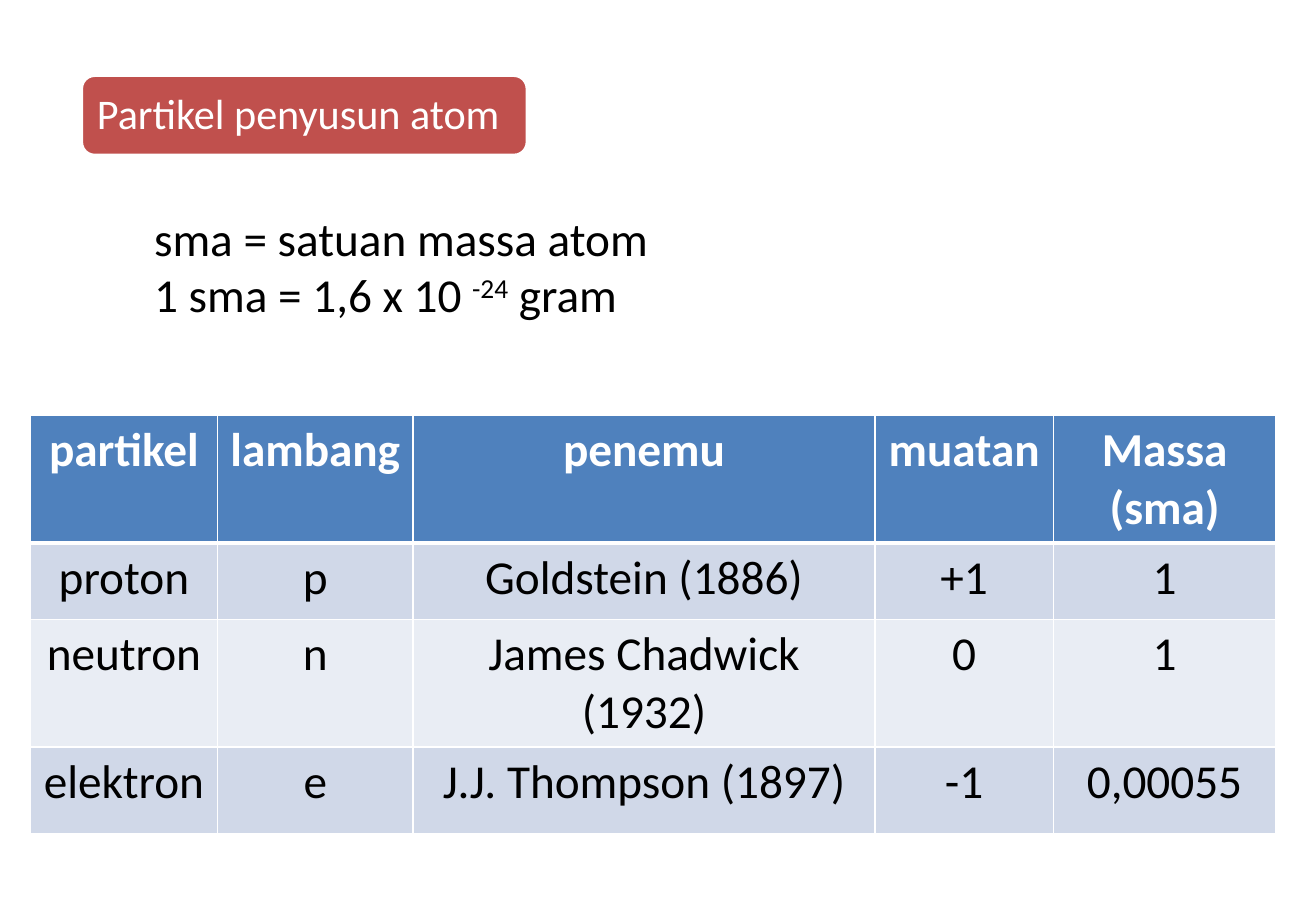
import pptx
import pptx.dml.color
import pptx.enum.shapes
import pptx.enum.text
import pptx.oxml
import pptx.oxml.ns
import pptx.util

PX = 9144  # EMU per px, 100 px to the inch
FONT = "Calibri"
WHITE, BLACK = "FFFFFF", "000000"
RED, BLUE = "C0504D", "4F81BD"
BANDS = ["D0D8E8", "E9EDF4"]

COLUMN_WIDTHS = [154, 161, 380, 147, 183]
ROW_HEIGHTS = [104, 63, 105, 71]
PARTICLES = [
    ["partikel", "lambang", "penemu", "muatan", "Massa (sma)"],
    ["proton", "p", "Goldstein (1886)", "+1", "1"],
    ["neutron", "n", "James Chadwick (1932)", "0", "1"],
    ["elektron", "e", "J.J. Thompson (1897)", "-1", "0,00055"],
]


def px(*lengths):
    return [pptx.util.Emu(length * PX) for length in lengths]


def rgb(color):
    return pptx.dml.color.RGBColor.from_string(color)


def add_run(paragraph, text, size, color, bold=False, baseline=0):
    run = paragraph.add_run()
    run.text = text
    run.font.name = FONT
    run.font.size = pptx.util.Pt(size)
    run.font.bold = bold
    run.font.color.rgb = rgb(color)
    if baseline:
        run._r.get_or_add_rPr().set("baseline", str(baseline * 1000))


def add_text_frame(slide, left, top, width, height):
    frame = slide.shapes.add_textbox(*px(left, top, width, height)).text_frame
    frame.word_wrap = True
    return frame


def add_heading(slide, text):
    plate = slide.shapes.add_shape(
        pptx.enum.shapes.MSO_SHAPE.ROUNDED_RECTANGLE, *px(67, 62, 367, 66))
    plate.shadow.inherit = False
    plate.fill.solid()
    plate.fill.fore_color.rgb = rgb(RED)
    plate.line.color.rgb = rgb(WHITE)
    plate.line.width = pptx.util.Pt(2)

    heading = add_text_frame(slide, 70, 66, 360, 59)
    heading.margin_top, heading.margin_bottom = px(10, 10)
    heading.vertical_anchor = pptx.enum.text.MSO_ANCHOR.MIDDLE
    heading.paragraphs[0].line_spacing = 0.9
    add_run(heading.paragraphs[0], text, 25, WHITE)


def add_unit_note(slide):
    note = add_text_frame(slide, 117, 167, 500, 104)
    note.auto_size = pptx.enum.text.MSO_AUTO_SIZE.SHAPE_TO_FIT_TEXT
    add_run(note.paragraphs[0], "sma = satuan massa atom", 28, BLACK)
    conversion = note.add_paragraph()
    for text, baseline in [("1 sma = 1,6 x 10 ", 0), ("-24", 30), (" gram", 0)]:
        add_run(conversion, text, 28, BLACK, baseline=baseline)


def set_borders(cell, top, bottom):
    properties = cell._tc.get_or_add_tcPr()
    widths = {"lnL": 1, "lnR": 1, "lnT": top, "lnB": bottom}
    for position, (side, width) in enumerate(widths.items()):
        border = pptx.oxml.parse_xml(
            f'<a:{side} {pptx.oxml.ns.nsdecls("a")} w="{pptx.util.Pt(width)}">'
            f'<a:solidFill><a:srgbClr val="{WHITE}"/></a:solidFill></a:{side}>')
        properties.insert(position, border)


def fill_cell(cell, text, row):
    is_header = row == 0
    cell.fill.solid()
    cell.fill.fore_color.rgb = rgb(BLUE if is_header else BANDS[(row - 1) % 2])
    set_borders(cell, top=3 if row == 1 else 1, bottom=3 if is_header else 1)
    paragraph = cell.text_frame.paragraphs[0]
    paragraph.alignment = pptx.enum.text.PP_ALIGN.CENTER
    add_run(paragraph, text, 28, WHITE if is_header else BLACK, bold=is_header)


def add_particle_table(slide):
    table = slide.shapes.add_table(
        len(ROW_HEIGHTS), len(COLUMN_WIDTHS),
        *px(25, 342, sum(COLUMN_WIDTHS), sum(ROW_HEIGHTS))).table
    table.horz_banding = False
    for column, width in zip(table.columns, px(*COLUMN_WIDTHS)):
        column.width = width
    for row, height in zip(table.rows, px(*ROW_HEIGHTS)):
        row.height = height
    for row, texts in enumerate(PARTICLES):
        for column, text in enumerate(texts):
            fill_cell(table.cell(row, column), text, row)


def main():
    deck = pptx.Presentation()
    deck.slide_width, deck.slide_height = px(1083, 750)
    slide = deck.slides.add_slide(deck.slide_layouts[6])

    # Particles: symbol, discoverer, charge and mass
    add_particle_table(slide)
    # Heading plate
    add_heading(slide, "Partikel penyusun atom")
    # Atomic mass unit
    add_unit_note(slide)

    deck.save("out.pptx")


if __name__ == "__main__":
    main()
